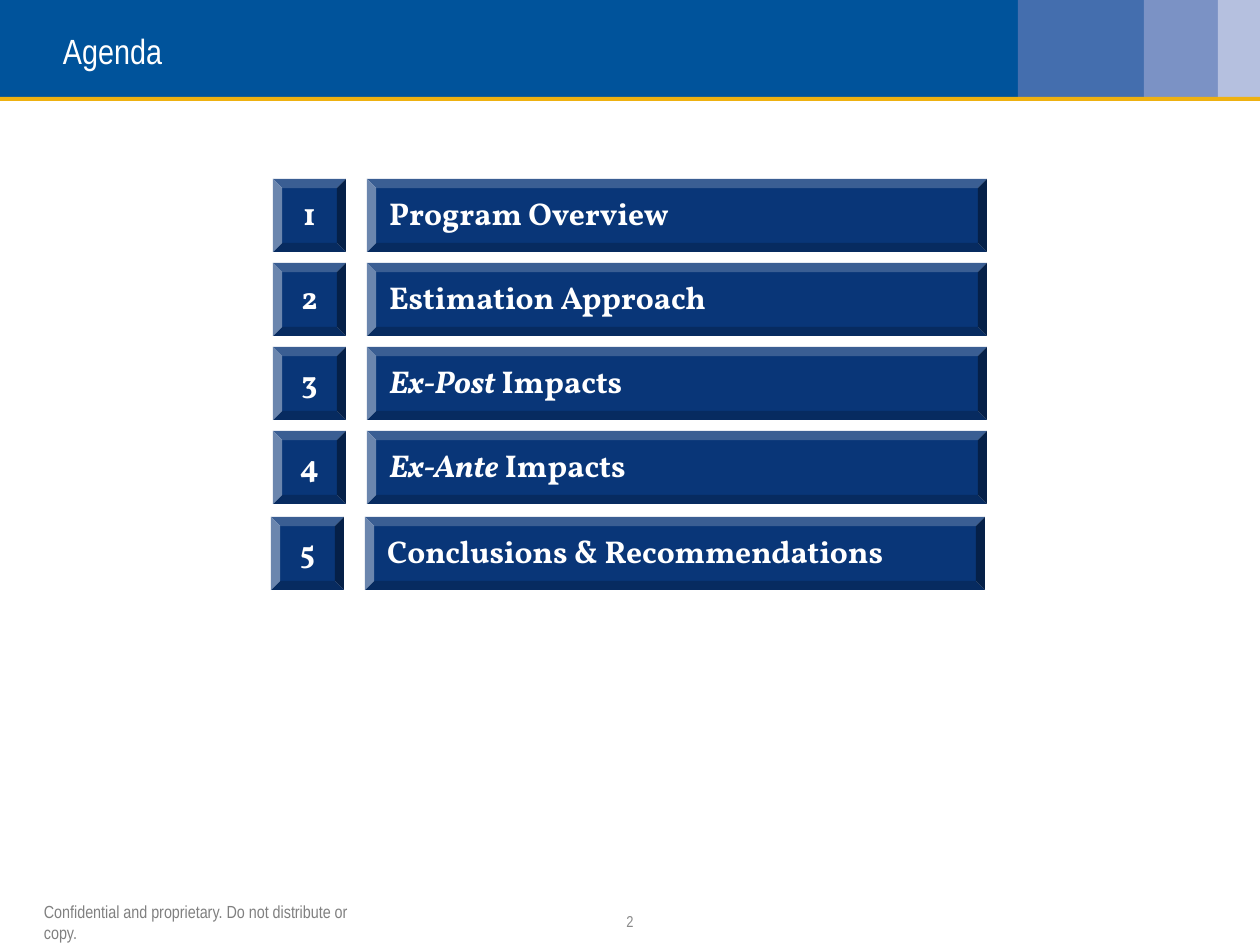
from pptx import Presentation
from pptx.dml.color import RGBColor
from pptx.enum.shapes import MSO_SHAPE as Shape
from pptx.enum.text import MSO_ANCHOR as Anchor, MSO_AUTO_SIZE as AutoSize, PP_ALIGN as Align
from pptx.util import Emu, Pt

PX = 914400 / 126
WIDTH, HEIGHT = 1260, 945
COLORS = {
    "banner": "00539B", "block_dark": "446EAE", "block_mid": "7B92C5",
    "block_light": "B5C0DF", "rule": "EEB111", "bevel": "093678",
    "white": "FFFFFF", "notice": "808080", "number": "898989",
}
TITLE = {"name": "Arial Narrow", "size": Pt(20), "color": "white"}
NOTICE = {"name": "Arial Narrow", "size": Pt(10), "color": "notice"}
NUMBER = {"name": "Arial Narrow", "size": Pt(9), "color": "number"}
AGENDA = {"name": "Vollkorn", "size": Pt(18), "bold": True, "color": "white"}
ITEMS = [
    [("Program Overview", False)],
    [("Estimation Approach", False)],
    [("Ex-Post", True), (" Impacts", False)],
    [("Ex-Ante", True), (" Impacts", False)],
    [("Conclusions & Recommendations", False)],
]


def px(length):
    return Emu(round(length * PX))


def rgb(key):
    return RGBColor.from_string(COLORS[key])


def add_block(slide, box, color, preset=Shape.RECTANGLE):
    block = slide.shapes.add_shape(preset, *map(px, box))
    block.shadow.inherit = False
    block.fill.solid()
    block.fill.fore_color.rgb = rgb(color)
    block.line.fill.background()
    return block


def write(holder, runs, style, align=Align.LEFT, inset=0, wrap=True):
    frame = holder.text_frame
    layout = {
        "margin_left": px(inset), "margin_right": px(inset),
        "margin_top": 0, "margin_bottom": 0,
        "vertical_anchor": Anchor.MIDDLE, "word_wrap": wrap,
        "auto_size": AutoSize.NONE if wrap else AutoSize.SHAPE_TO_FIT_TEXT,
    }
    for key, value in layout.items():
        setattr(frame, key, value)
    paragraph = frame.paragraphs[0]
    paragraph.alignment = align
    for text, italic in runs:
        run = paragraph.add_run()
        run.text = text
        for key, value in style.items():
            if key == "color":
                run.font.color.rgb = rgb(value)
            else:
                setattr(run.font, key, value)
        run.font.italic = italic
    return paragraph


def add_label(slide, box, text, style, **options):
    label = slide.shapes.add_textbox(*map(px, box))
    write(label, [(text, False)], style, **options)


def add_header(slide, left, top, width, height):
    edges = [0, 1018, 1144, 1218, width]
    colors = ["banner", "block_dark", "block_mid", "block_light"]
    for start, end, color in zip(edges, edges[1:], colors):
        add_block(slide, (left + start, top, end - start, height), color)
    add_block(slide, (left, top + height, width, 4), "rule")
    add_label(slide, (left + 63, top, width - 126, height + 4), "Agenda", TITLE)


def add_agenda_row(slide, left, top, width, height, number, runs):
    offset = height + 21
    number_box = (left, top, height, height)
    topic_box = (left + offset, top, width - offset, height)
    cells = [
        (number_box, [(str(number), False)], Align.CENTER),
        (topic_box, runs, Align.LEFT),
    ]
    for box, cell_runs, align in cells:
        cell = add_block(slide, box, "bevel", Shape.BEVEL)
        cell.adjustments[0] = 0.125
        write(cell, cell_runs, AGENDA, align, inset=13).line_spacing = 0.9


def add_agenda(slide, left, top, width, pitch):
    last = len(ITEMS) - 1
    for index, runs in enumerate(ITEMS):
        shift_x, shift_y = (-2, 2) if index == last else (0, 0)
        add_agenda_row(slide, left + shift_x, top + index * pitch + shift_y,
                       width, 73, index + 1, runs)


def add_footer(slide, left, top, width, height):
    notice = "Confidential and proprietary. Do not distribute or copy."
    add_label(slide, (left + 44, top, 312, height), notice, NOTICE, wrap=False)
    add_label(slide, (left + (width - 16) // 2, top, 16, height), "2", NUMBER,
              align=Align.CENTER, wrap=False)


def main():
    deck = Presentation()
    deck.slide_width, deck.slide_height = px(WIDTH), px(HEIGHT)
    slide = deck.slides.add_slide(deck.slide_layouts[6])
    add_header(slide, 0, 0, WIDTH, 97)
    add_agenda(slide, 273, 179, 714, 84)
    add_footer(slide, 0, 912, WIDTH, 19)
    deck.save("out.pptx")


if __name__ == "__main__":
    main()
